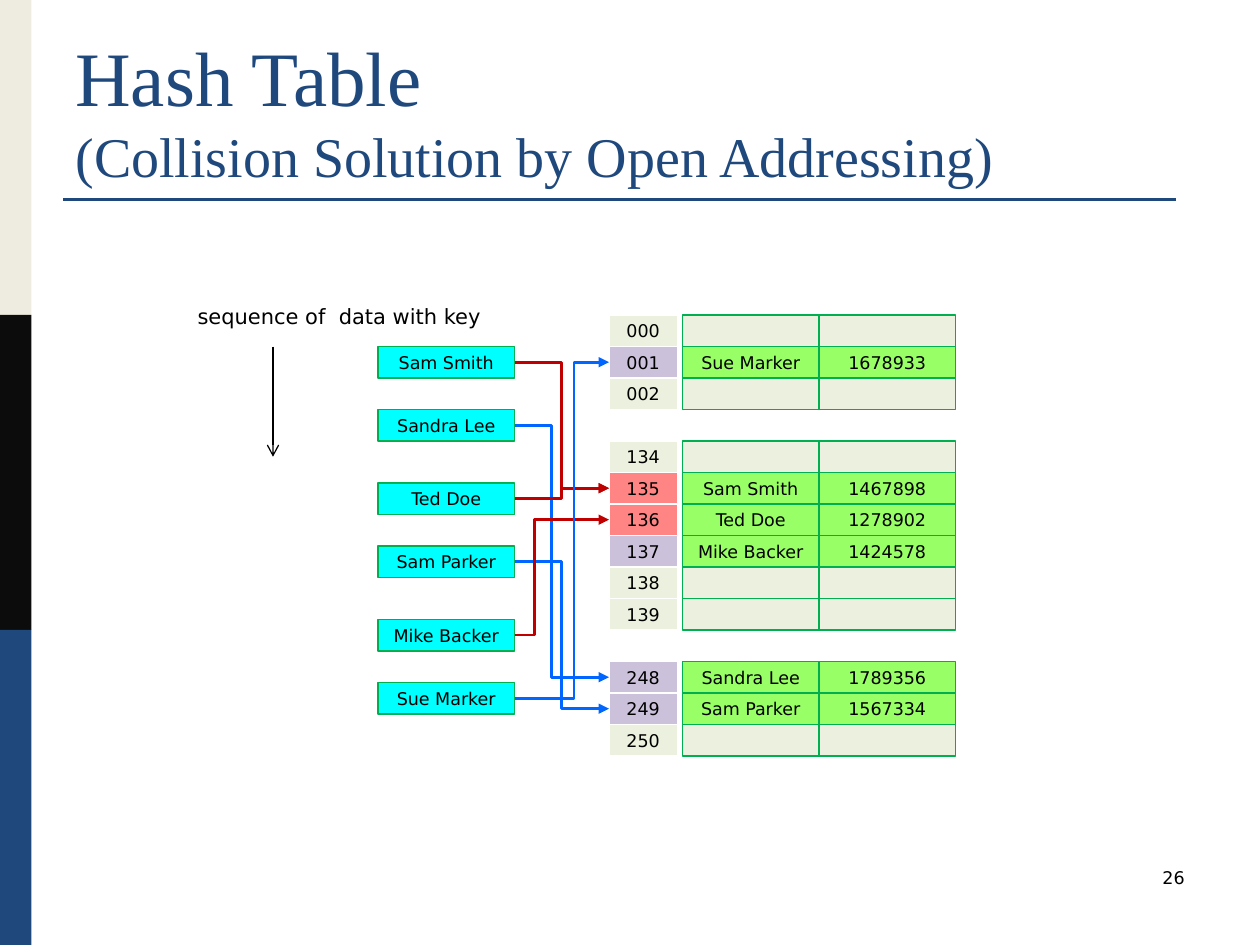
from dataclasses import dataclass
from typing import NamedTuple, Optional

from lxml.etree import SubElement
from pptx import Presentation
from pptx.dml.color import RGBColor
from pptx.enum.shapes import MSO_CONNECTOR as Connector, MSO_SHAPE as Shape
from pptx.enum.text import MSO_ANCHOR as Anchor, PP_ALIGN as Align
from pptx.oxml.ns import qn
from pptx.util import Pt


@dataclass(frozen=True)
class Theme:
    navy: str = "1F497D"
    ivory: str = "EEECE1"
    charcoal: str = "0C0C0C"
    black: str = "000000"
    white: str = "FFFFFF"
    key: str = "00FFFF"
    border: str = "00B050"
    empty: str = "EBF1DE"
    filled: str = "99FF66"
    hit: str = "CCC1DA"
    collision: str = "FF8585"
    red: str = "C00000"
    blue: str = "0066FF"
    title_font: str = "Times New Roman"
    body_font: str = "DejaVu Sans"
    title_size: int = 44
    subtitle_size: int = 32
    label_size: int = 12
    body_size: int = 10
    thin: float = 0.75
    thick: float = 1.5


class Key(NamedTuple):
    name: str
    top: float
    slot: str  # slot the arrow points at
    color: str
    bend: float  # share of the way at which the arrow turns


class Slot(NamedTuple):
    index: str
    color: str
    name: str = ""
    number: str = ""


class Block(NamedTuple):
    top: float
    slots: list[Slot]


THEME = Theme()
ROW_HEIGHT, CELL_WIDTH, INDEX_WIDTH = 18, 78, 39
KEY_LEFT, INDEX_LEFT, CELL_LEFT = 216, 348, 390

KEYS = [
    Key("Sam Smith", 198, "135", THEME.red, 0.5),
    Key("Sandra Lee", 234, "248", THEME.blue, 0.39),
    Key("Ted Doe", 276, "135", THEME.red, 0.5),
    Key("Sam Parker", 312, "249", THEME.blue, 0.5),
    Key("Mike Backer", 354, "136", THEME.red, 0.21),
    Key("Sue Marker", 390, "001", THEME.blue, 0.63),
]
BLOCKS = [
    Block(180, [
        Slot("000", THEME.empty),
        Slot("001", THEME.hit, "Sue Marker", "1678933"),
        Slot("002", THEME.empty),
    ]),
    Block(252, [
        Slot("134", THEME.empty),
        Slot("135", THEME.collision, "Sam Smith", "1467898"),
        Slot("136", THEME.collision, "Ted Doe", "1278902"),
        Slot("137", THEME.hit, "Mike Backer", "1424578"),
        Slot("138", THEME.empty),
        Slot("139", THEME.empty),
    ]),
    Block(378, [
        Slot("248", THEME.hit, "Sandra Lee", "1789356"),
        Slot("249", THEME.hit, "Sam Parker", "1567334"),
        Slot("250", THEME.empty),
    ]),
]


def style_span(span, size: float, color: str, font: str) -> None:
    span.font.size = Pt(size)
    span.font.name = font
    span.font.color.rgb = RGBColor.from_string(color)


def add_box(page, left: float, top: float, width: float, height: float,
            fill: str, border: Optional[str] = None, text: str = ""):
    box = page.shapes.add_shape(Shape.RECTANGLE, Pt(left), Pt(top), Pt(width), Pt(height))
    box.shadow.inherit = False
    box.fill.solid()
    box.fill.fore_color.rgb = RGBColor.from_string(fill)
    if border:
        box.line.color.rgb = RGBColor.from_string(border)
        box.line.width = Pt(THEME.thin)
    else:
        box.line.fill.background()
    if text:
        frame = box.text_frame
        frame.margin_left = frame.margin_right = frame.margin_top = frame.margin_bottom = 0
        frame.vertical_anchor = Anchor.MIDDLE
        frame.text = text
        para = frame.paragraphs[0]
        para.alignment = Align.CENTER
        style_span(para.runs[0], THEME.body_size, THEME.black, THEME.body_font)
    return box


def add_text(page, left: float, top: float, width: float, height: float, text: str,
             sizes: list[float], color: str, font: str,
             align: Align = Align.LEFT, anchor: Anchor = Anchor.TOP) -> None:
    frame = page.shapes.add_textbox(Pt(left), Pt(top), Pt(width), Pt(height)).text_frame
    frame.word_wrap = True
    frame.vertical_anchor = anchor
    para = frame.paragraphs[0]
    para.text = text
    para.alignment = align
    for span, size in zip(para.runs, sizes):
        style_span(span, size, color, font)


def add_line(page, kind: Connector, start: tuple[float, float], end: tuple[float, float],
             color: str, width: float, head: Optional[str] = None):
    line = page.shapes.add_connector(kind, *map(Pt, start + end))
    line.line.color.rgb = RGBColor.from_string(color)
    line.line.width = Pt(width)
    properties = line._element.spPr
    if head:
        SubElement(properties.find(qn("a:ln")), qn("a:tailEnd"), type=head)
    SubElement(properties, qn("a:effectLst"))
    return line


def add_arrow(page, key: Key, key_box, slot_box) -> None:
    middle = key.top + ROW_HEIGHT / 2
    arrow = add_line(page, Connector.ELBOW, (KEY_LEFT + CELL_WIDTH, middle),
                     (INDEX_LEFT, middle), key.color, THEME.thick, "triangle")
    arrow.begin_connect(key_box, 3)
    arrow.end_connect(slot_box, 1)
    guides = arrow._element.spPr.find(qn("a:prstGeom")).get_or_add_avLst()
    SubElement(guides, qn("a:gd"), name="adj1", fmla=f"val {round(key.bend * 100000)}")


def add_block(page, block: Block) -> dict:
    index_boxes = {}
    for row, slot in enumerate(block.slots):
        top = block.top + row * ROW_HEIGHT
        fill = THEME.filled if slot.name else THEME.empty
        for column, text in enumerate((slot.name, slot.number)):
            add_box(page, CELL_LEFT + column * CELL_WIDTH, top, CELL_WIDTH, ROW_HEIGHT,
                    fill, THEME.border, text)
        index_boxes[slot.index] = add_box(page, INDEX_LEFT, top, INDEX_WIDTH, ROW_HEIGHT,
                                          slot.color, THEME.white, slot.index)
    return index_boxes


def main() -> None:
    deck = Presentation()
    deck.slide_width, deck.slide_height = Pt(720), Pt(540)
    page = deck.slides.add_slide(deck.slide_layouts[6])

    # Side band and title rule
    for position, color in enumerate((THEME.ivory, THEME.charcoal, THEME.navy)):
        add_box(page, 0, position * 180, 18, 180, color)
    add_line(page, Connector.STRAIGHT, (36, 114), (672, 114), THEME.navy, THEME.thick)

    # Title, label and page number
    add_text(page, 36, 21.6, 648, 90, "Hash Table\v(Collision Solution by Open Addressing)",
             [THEME.title_size, THEME.subtitle_size], THEME.navy, THEME.title_font,
             anchor=Anchor.BOTTOM)
    add_text(page, 102, 170, 192, 21.6, " sequence of  data with key",
             [THEME.label_size], THEME.black, THEME.body_font)
    add_text(page, 516, 492, 168, 36, "26", [THEME.body_size], THEME.black,
             THEME.body_font, align=Align.RIGHT)

    # Keys and hash table
    key_boxes = [add_box(page, KEY_LEFT, key.top, CELL_WIDTH, ROW_HEIGHT,
                         THEME.key, THEME.border, key.name) for key in KEYS]
    slot_boxes = {}
    for block in BLOCKS:
        slot_boxes.update(add_block(page, block))

    # Arrows from keys to slots, and the reading direction
    for key, key_box in zip(KEYS, key_boxes):
        add_arrow(page, key, key_box, slot_boxes[key.slot])
    add_line(page, Connector.STRAIGHT, (156, 198), (156, 261), THEME.black,
             THEME.thin, "arrow")

    deck.save("out.pptx")


if __name__ == "__main__":
    main()
